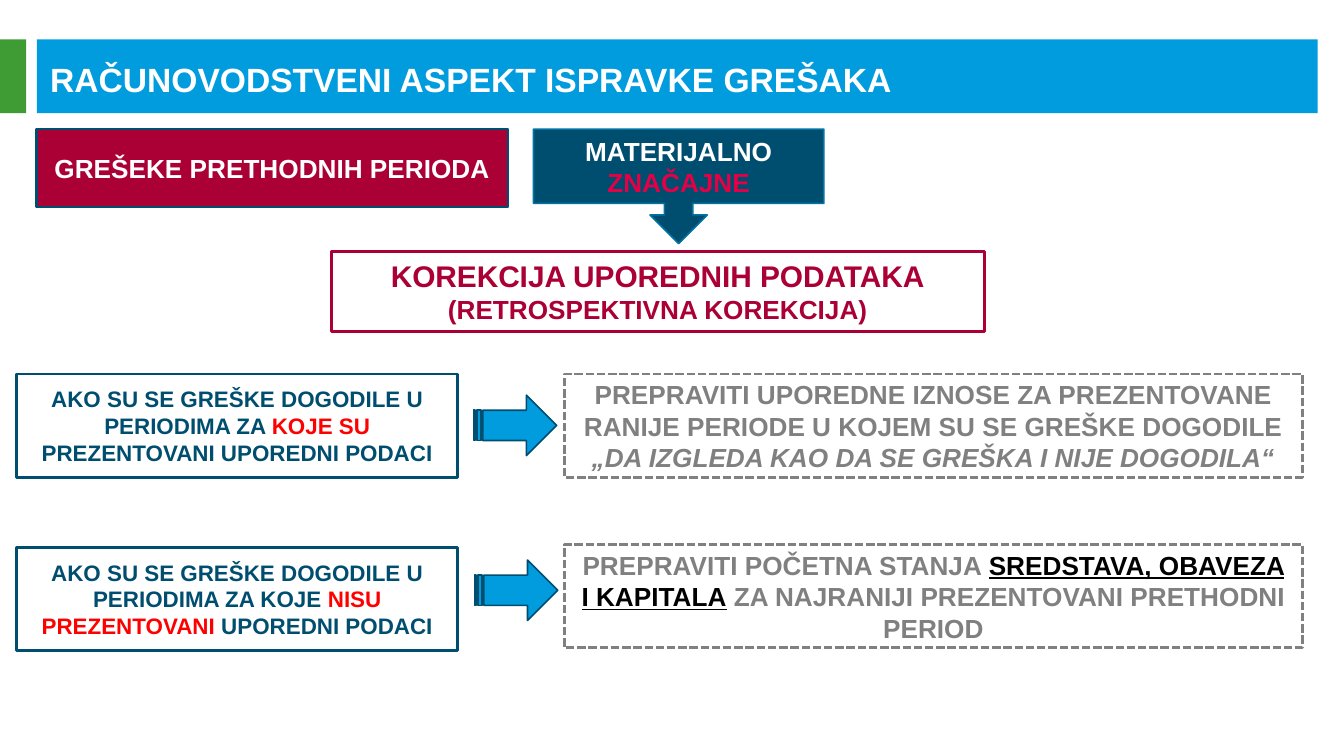
from dataclasses import dataclass

from pptx import Presentation
from pptx.dml.color import RGBColor
from pptx.enum.dml import MSO_LINE as Dash
from pptx.enum.shapes import MSO_SHAPE as Shape
from pptx.enum.text import MSO_ANCHOR as Anchor, PP_ALIGN as Align
from pptx.util import Inches, Pt


@dataclass(frozen=True)
class Theme:
    font: str = "Arial"
    blue: str = "009CDE"
    green: str = "3F9C35"
    crimson: str = "AB0035"
    navy: str = "004E6F"
    teal: str = "0073A4"
    pink: str = "E40046"
    red: str = "FF0000"
    gray: str = "808080"
    white: str = "FFFFFF"
    black: str = "000000"
    title: int = 18
    heading: int = 16
    body: int = 14
    small: int = 12
    border: float = 1.5
    thin: float = 0.85


THEME = Theme()
WIDTH = Inches(10)
HEIGHT = WIDTH * 9 // 16


def area(left, top, width, height):
    return (int(WIDTH * left / 100), int(HEIGHT * top / 100),
            int(WIDTH * width / 100), int(HEIGHT * height / 100))


def add_block(slide, place, kind=Shape.RECTANGLE, fill=None, line=None,
              weight=THEME.border, dash=None):
    shape = slide.shapes.add_shape(kind, *area(*place))
    shape.shadow.inherit = False
    if fill:
        shape.fill.solid()
        shape.fill.fore_color.rgb = RGBColor.from_string(fill)
    else:
        shape.fill.background()
    if line:
        shape.line.color.rgb = RGBColor.from_string(line)
        shape.line.width = Pt(weight)
        if dash:
            shape.line.dash_style = dash
    else:
        shape.line.fill.background()
    return shape


def write(shape, paragraphs, align=Align.CENTER, space_after=0):
    frame = shape.text_frame
    frame.word_wrap = True
    frame.vertical_anchor = Anchor.MIDDLE
    for index, (size, runs) in enumerate(paragraphs):
        paragraph = frame.add_paragraph() if index else frame.paragraphs[0]
        paragraph.alignment = align
        paragraph.space_after = Pt(space_after)
        for text, color, *styles in runs:
            run = paragraph.add_run()
            run.text = text
            run.font.name = THEME.font
            run.font.size = Pt(size)
            run.font.bold = True
            run.font.italic = "italic" in styles
            run.font.underline = "underline" in styles
            run.font.color.rgb = RGBColor.from_string(color)


def add_title(slide, text):
    top, height = 5.19, 9.78
    add_block(slide, (2.75, top, 95.3, height), fill=THEME.blue)
    add_block(slide, (0, top, 1.95, height), fill=THEME.green)
    title = slide.shapes.add_textbox(*area(2.75, 5.33, 96.5, 10.31))
    write(title, [(THEME.title, [(text, THEME.white)])], Align.LEFT)


def add_topic(slide):
    top = 17.07
    topic = add_block(slide, (2.7, top, 35.1, 10.31), fill=THEME.crimson,
                      line=THEME.navy)
    write(topic, [(THEME.body, [("GREŠEKE PRETHODNIH PERIODA", THEME.white)])],
          space_after=6)
    callout = add_block(slide, (39.7, top, 21.6, 15.15), Shape.DOWN_ARROW_CALLOUT,
                        THEME.navy, THEME.teal, THEME.thin)
    write(callout, [(THEME.body, [("MATERIJALNO ", THEME.white),
                                  ("ZNAČAJNE", THEME.pink)])])
    correction = add_block(slide, (24.65, 33.24, 48.6, 10.67), line=THEME.crimson)
    write(correction, [
        (THEME.heading, [("KOREKCIJA UPOREDNIH PODATAKA", THEME.crimson)]),
        (THEME.body, [("(RETROSPEKTIVNA KOREKCIJA)", THEME.crimson)]),
    ])


def add_rule(slide, tops, arrow_left, condition, action):
    condition_top, arrow_top, action_top = tops
    height = 13.69
    cause = add_block(slide, (1.25, condition_top, 32.8, height), line=THEME.navy)
    write(cause, [(THEME.small, condition)], space_after=6)
    add_block(slide, (arrow_left, arrow_top, 6.2, 8), Shape.STRIPED_RIGHT_ARROW,
              THEME.blue, THEME.navy, THEME.thin)
    remedy = add_block(slide, (42, action_top, 54.9, height), line=THEME.gray,
                       dash=Dash.SQUARE_DOT)
    write(remedy, [(THEME.body, action)], space_after=6)


def main():
    presentation = Presentation()
    presentation.slide_width, presentation.slide_height = WIDTH, HEIGHT
    slide = presentation.slides.add_slide(presentation.slide_layouts[6])
    add_title(slide, "RAČUNOVODSTVENI ASPEKT ISPRAVKE GREŠAKA")
    add_topic(slide)
    add_rule(
        slide, (49.47, 52.27, 49.47), 35.22,
        [("AKO SU SE GREŠKE DOGODILE U PERIODIMA ZA ", THEME.navy),
         ("KOJE SU ", THEME.red),
         ("PREZENTOVANI UPOREDNI PODACI", THEME.navy)],
        [("PREPRAVITI UPOREDNE IZNOSE ZA PREZENTOVANE RANIJE PERIODE "
          "U KOJEM SU SE GREŠKE DOGODILE ", THEME.gray),
         ("„DA IZGLEDA KAO DA SE GREŠKA I NIJE DOGODILA“", THEME.gray, "italic")])
    add_rule(
        slide, (72.4, 74.08, 72.02), 35.3,
        [("AKO SU SE GREŠKE DOGODILE U PERIODIMA ZA KOJE ", THEME.navy),
         ("NISU PREZENTOVANI", THEME.red),
         (" UPOREDNI PODACI", THEME.navy)],
        [("PREPRAVITI POČETNA STANJA ", THEME.gray),
         ("SREDSTAVA, OBAVEZA I KAPITALA", THEME.black, "underline"),
         (" ZA NAJRANIJI PREZENTOVANI PRETHODNI PERIOD", THEME.gray)])
    presentation.save("out.pptx")


if __name__ == "__main__":
    main()
